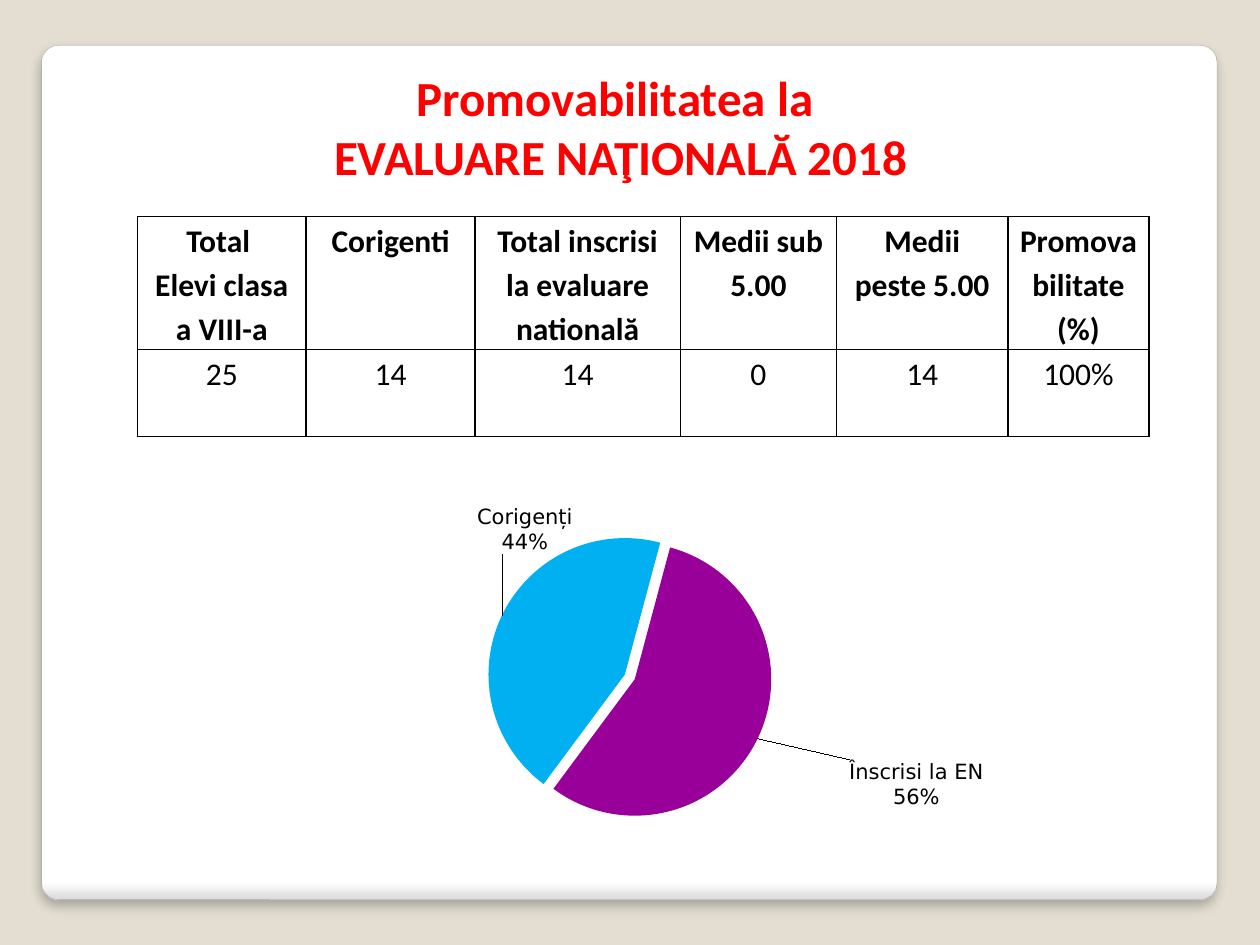
from pptx import Presentation
from pptx.chart.data import CategoryChartData
from pptx.dml.color import RGBColor
from pptx.enum.chart import XL_CHART_TYPE
from pptx.enum.shapes import MSO_SHAPE
from pptx.enum.text import MSO_ANCHOR, PP_ALIGN
from pptx.oxml import parse_xml
from pptx.oxml.ns import nsdecls, qn
from pptx.util import Inches, Pt

# Content
TITLE = ["Promovabilitatea la ", "EVALUARE NAŢIONALĂ 2018"]
ROWS = [
    ["Total \nElevi clasa a VIII-a", "Corigenti", "Total inscrisi la evaluare natională",
     "Medii sub 5.00", "Medii peste 5.00", "Promovabilitate (%)"],
    ["25", "14", "14", "0", "14", "100%"],
]
CATS = ["", "Înscrisi la EN", "Corigenți"]
VALS = [None, 56, 44]

# Look
HEX = {"back": "E3DED1", "card": "FFFFFF", "edge": "DADADA", "rim": "A4A4A4",
       "title": "FF0000", "text": "000000", "enrolled": "990099", "failed": "00B0F0"}
HEAD = {"name": "Calibri", "size": Pt(28), "bold": True}
CELL = {"name": "Calibri", "size": Pt(18)}
COLS = [1.34, 1.34, 1.63, 1.24, 1.36, 1.12]
HIGH = [1.03, 0.69]
PLOT = {"x": 0.1, "y": 0.32, "w": 0.87, "h": 0.64}
# Slice: colour and label shift as shares of the chart
SLICES = {1: ("enrolled", 0.11, 0.04), 2: ("failed", 0.1, -0.13)}


def rgb(key):
    return RGBColor.from_string(HEX[key])


def style(font, look, key):
    for name, value in look.items():
        setattr(font, name, value)
    font.color.rgb = rgb(key)


def box(*sizes):
    return [Inches(size) for size in sizes]


def write(frame, lines, look, key, gap=1.0):
    frame.text = "\n".join(lines)
    for para in frame.paragraphs:
        para.alignment = PP_ALIGN.CENTER
        para.line_spacing = gap
        for run in para.runs:
            style(run.font, look, key)


def border(cell):
    props = cell._tc.get_or_add_tcPr()
    for spot, side in enumerate(("lnL", "lnR", "lnT", "lnB")):
        props.insert(spot, parse_xml(
            f'<a:{side} {nsdecls("a")} w="12700"><a:solidFill>'
            f'<a:srgbClr val="{HEX["text"]}"/></a:solidFill></a:{side}>'))


def layout(parts):
    tags = "".join(f'<c:{tag} val="{val}"/>' for tag, val in parts.items())
    return f'<c:layout {nsdecls("c")}><c:manualLayout>{tags}</c:manualLayout></c:layout>'


def labels():
    def show(on):
        flags = {"LegendKey": 0, "Val": 0, "CatName": on, "SerName": 0,
                 "Percent": on, "BubbleSize": 0}
        return "".join(f'<c:show{tag} val="{val}"/>' for tag, val in flags.items())

    tail = "<c:separator>\n</c:separator>"
    pos = '<c:dLblPos val="bestFit"/>'
    each = "".join(
        f'<c:dLbl><c:idx val="{idx}"/>{layout({"x": x, "y": y})}{pos}{show(1)}{tail}</c:dLbl>'
        for idx, (_, x, y) in SLICES.items())
    font = (f'<c:txPr><a:bodyPr/><a:p><a:pPr><a:defRPr sz="1200"><a:solidFill>'
            f'<a:srgbClr val="{HEX["text"]}"/></a:solidFill><a:latin typeface="DejaVu Sans"/>'
            f'</a:defRPr></a:pPr><a:endParaRPr lang="ro-RO"/></a:p></c:txPr>')
    return parse_xml(f'<c:dLbls {nsdecls("c", "a")}>{each}{font}{pos}{show(1)}{tail}'
                     f'<c:showLeaderLines val="1"/></c:dLbls>')


def add_card(slide):
    card = slide.shapes.add_shape(MSO_SHAPE.ROUNDED_RECTANGLE, *box(0.33, 0.36, 9.33, 6.78))
    card.adjustments[0] = 0.02
    card.fill.gradient()
    card.fill.gradient_angle = 270
    for stop, key, place in zip(card.fill.gradient_stops, ("card", "edge"), (0.98, 1.0)):
        stop.color.rgb, stop.position = rgb(key), place
    card.line.color.rgb = rgb("rim")
    card.line.width = Pt(0.16)
    card.shadow.inherit = False
    card._element.spPr.find(qn("a:effectLst")).append(parse_xml(
        f'<a:outerShdw {nsdecls("a")} blurRad="{Pt(6)}" dist="{Pt(4)}" dir="5400000">'
        f'<a:srgbClr val="{HEX["text"]}"><a:alpha val="25000"/></a:srgbClr></a:outerShdw>'))
    slide.shapes._spTree.insert(2, card._element)


def add_title(slide):
    title = slide.shapes.title
    title.left, title.top, title.width, title.height = box(2.09, 0.5, 5.67, 1)
    title.text_frame.vertical_anchor = MSO_ANCHOR.MIDDLE
    write(title.text_frame, TITLE, HEAD, "title")


def add_grid(slide):
    table = slide.shapes.add_table(len(ROWS), len(COLS),
                                   *box(1.09, 1.72, sum(COLS), sum(HIGH))).table
    table.first_row = table.horz_banding = False
    for col, width in zip(table.columns, COLS):
        col.width = Inches(width)
    for r, (row, texts) in enumerate(zip(table.rows, ROWS)):
        row.height = Inches(HIGH[r])
        for cell, text in zip(row.cells, texts):
            cell.margin_left = cell.margin_right = Inches(0.07)
            cell.margin_top = cell.margin_bottom = 0
            cell.fill.background()
            border(cell)
            write(cell.text_frame, [text], {**CELL, "bold": r == 0}, "text", 1.15)


def add_pie(slide):
    data = CategoryChartData()
    data.categories = CATS
    data.add_series("Series 1", VALS)
    chart = slide.shapes.add_chart(XL_CHART_TYPE.PIE, *box(1.72, 3.12, 6.13, 3.52), data).chart
    chart.has_legend = chart.has_title = False
    style(chart.font, {"name": "DejaVu Sans", "size": Pt(18)}, "text")
    plot = chart.plots[0]
    plot.vary_by_categories = True
    series = plot.series[0]
    for idx, (key, _, _) in SLICES.items():
        fill = series.points[idx].format.fill
        fill.solid()
        fill.fore_color.rgb = rgb(key)

    # Exploded slices, labels, start angle and plot area
    ser = series._element
    ser.find(qn("c:dPt")).addprevious(parse_xml(f'<c:explosion {nsdecls("c")} val="4"/>'))
    ser.find(qn("c:cat")).addprevious(labels())
    pie = ser.getparent()
    for old in pie.findall(qn("c:dLbls")) + pie.findall(qn("c:firstSliceAng")):
        pie.remove(old)
    pie.append(parse_xml(f'<c:firstSliceAng {nsdecls("c")} val="15"/>'))
    area = pie.getparent()
    for old in area.findall(qn("c:layout")):
        area.remove(old)
    area.insert(0, parse_xml(layout(
        {"layoutTarget": "inner", "xMode": "edge", "yMode": "edge", **PLOT})))


def main():
    deck = Presentation()
    deck.slide_width, deck.slide_height = box(10, 7.5)
    slide = deck.slides.add_slide(deck.slide_layouts[5])
    slide.background.fill.solid()
    slide.background.fill.fore_color.rgb = rgb("back")
    for add in (add_card, add_title, add_grid, add_pie):
        add(slide)
    deck.save("out.pptx")


if __name__ == "__main__":
    main()
